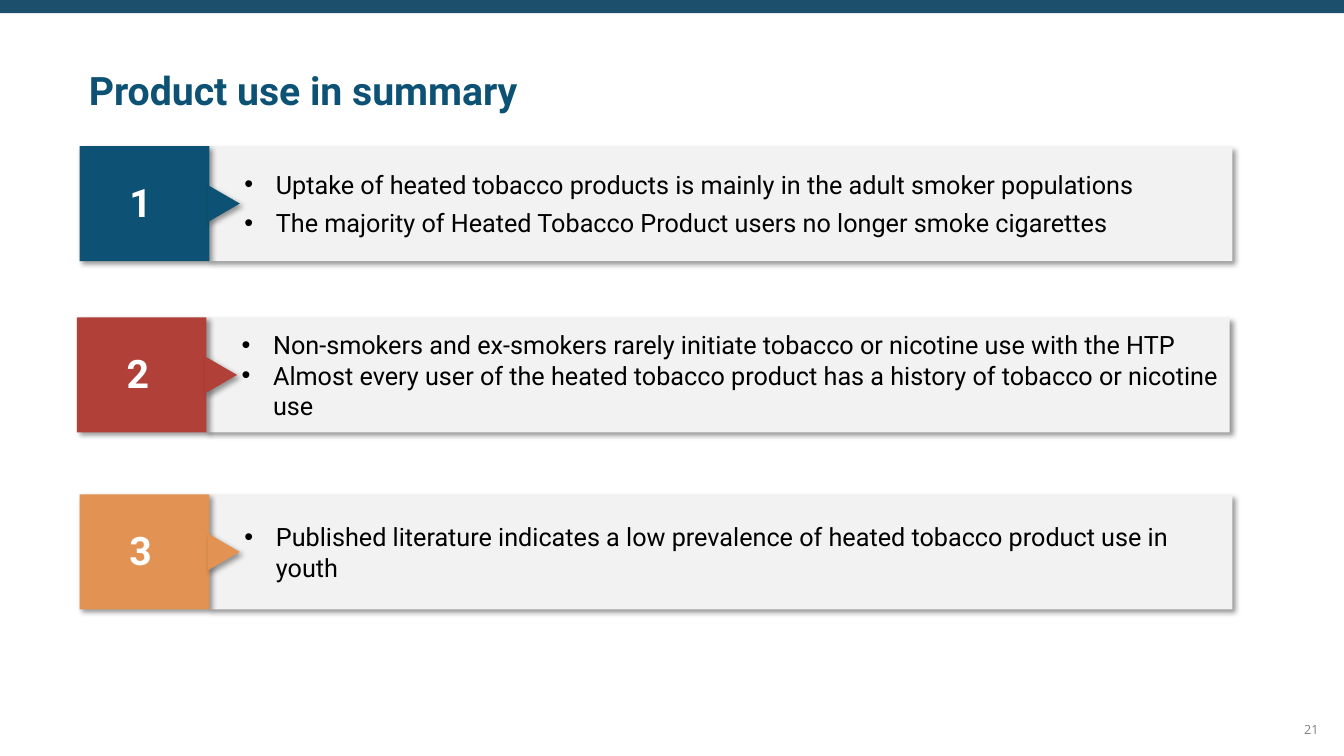
from lxml.etree import SubElement
from pptx import Presentation
from pptx.dml.color import RGBColor
from pptx.enum.shapes import MSO_SHAPE
from pptx.enum.text import MSO_ANCHOR, PP_ALIGN
from pptx.oxml.ns import qn
from pptx.util import Pt

BLUE = RGBColor(0x0D, 0x52, 0x74)
RED = RGBColor(0xB1, 0x40, 0x38)
ORANGE = RGBColor(0xE2, 0x93, 0x53)
BAND = RGBColor(0x1C, 0x4F, 0x6C)
PALE = RGBColor(0xF2, 0xF2, 0xF2)
GREY = RGBColor(0x80, 0x80, 0x80)
BLACK = RGBColor(0, 0, 0)
WHITE = RGBColor(0xFF, 0xFF, 0xFF)

TITLE = "Product use in summary"
PAGE = "21"
ROWS = [
    (56.9, 104.4, BLUE, 6, [
        "Uptake of heated tobacco products is mainly in the adult smoker populations",
        "The majority of Heated Tobacco Product users no longer smoke cigarettes"]),
    (54.9, 226.8, RED, 0, [
        "Non-smokers and ex-smokers rarely initiate tobacco or nicotine use with the HTP",
        "Almost every user of the heated tobacco product has a history of tobacco or nicotine use"]),
    (56.9, 353.2, ORANGE, 0, [
        "Published literature indicates a low prevalence of heated tobacco product use in youth"]),
]
HIGH = 82.1
BADGE = 92.6
PANEL = 730.8
DISC = 70
TIP_W, TIP_H = 26.6, 23


def style(font, name, size, color, bold=False):
    font.name = name
    font.size = Pt(size)
    font.color.rgb = color
    font.bold = bold


def add_shape(home, kind, box, color):
    shape = home.add_shape(kind, *map(Pt, box))
    shape.shadow.inherit = False
    shape.fill.solid()
    shape.fill.fore_color.rgb = color
    shape.line.fill.background()
    return shape


def add_shadow(shape):
    effects = shape._element.spPr.find(qn("a:effectLst"))
    outer = SubElement(effects, qn("a:outerShdw"), blurRad=str(Pt(4)),
                       dist=str(Pt(3)), dir="2700000", algn="tl", rotWithShape="0")
    color = SubElement(outer, qn("a:srgbClr"), val="000000")
    SubElement(color, qn("a:alpha"), val="40000")


def add_points(panel, points, gap):
    frame = panel.text_frame
    frame.word_wrap = True
    frame.vertical_anchor = MSO_ANCHOR.MIDDLE
    frame.text = "\n".join(points)
    for i, para in enumerate(frame.paragraphs):
        para.alignment = PP_ALIGN.LEFT
        if i and gap:
            para.space_before = Pt(gap)
        props = para._p.get_or_add_pPr()
        props.set("marL", str(Pt(40.5)))
        props.set("indent", str(Pt(-22.5)))
        SubElement(props, qn("a:buFont"), typeface="Arial")
        SubElement(props, qn("a:buChar"), char="•")
        style(para.runs[0].font, "Roboto", 18, BLACK)


def add_row(slide, number, left, top, color, gap, points):
    home = slide.shapes.add_group_shape().shapes
    edge = left + BADGE
    panel = add_shape(home, MSO_SHAPE.RECTANGLE, (edge, top, PANEL, HIGH), PALE)
    add_points(panel, points, gap)
    badge = add_shape(home, MSO_SHAPE.RECTANGLE, (left, top, BADGE, HIGH), color)
    tip = add_shape(home, MSO_SHAPE.ISOSCELES_TRIANGLE,
                    (edge - 3, top + (HIGH - TIP_H) / 2, TIP_W, TIP_H), color)
    tip.rotation = 90
    for shape in (panel, badge, tip):
        add_shadow(shape)
    disc = add_shape(home, MSO_SHAPE.OVAL, (left + 8.5, top + 4.7, DISC, DISC), color)
    frame = disc.text_frame
    frame.text = str(number)
    frame.vertical_anchor = MSO_ANCHOR.MIDDLE
    para = frame.paragraphs[0]
    para.alignment = PP_ALIGN.CENTER
    style(para.runs[0].font, "Roboto", 28, WHITE, True)


def add_title(slide):
    title = slide.shapes.title
    title.left, title.top, title.width, title.height = map(Pt, (56.2, 10.1, 822.2, 74.9))
    frame = title.text_frame
    frame.text = TITLE
    frame.word_wrap = True
    frame.vertical_anchor = MSO_ANCHOR.BOTTOM
    para = frame.paragraphs[0]
    para.alignment = PP_ALIGN.LEFT
    para.line_spacing = 0.85
    style(para.runs[0].font, "Roboto", 28, BLUE, True)


def add_page(slide):
    box = slide.shapes.add_textbox(*map(Pt, (907.2, 515.5, 34.6, 10.8)))
    frame = box.text_frame
    frame.margin_left = frame.margin_right = frame.margin_top = frame.margin_bottom = 0
    frame.word_wrap = True
    frame.text = PAGE
    para = frame.paragraphs[0]
    para.alignment = PP_ALIGN.RIGHT
    style(para.runs[0].font, "Open Sans", 9, GREY)


def main():
    deck = Presentation()
    deck.slide_width, deck.slide_height = Pt(960), Pt(540)
    slide = deck.slides.add_slide(deck.slide_layouts[5])
    add_page(slide)
    add_shape(slide.shapes, MSO_SHAPE.RECTANGLE, (0, 0, 960, 9.4), BAND)
    for number, row in enumerate(ROWS, 1):
        add_row(slide, number, *row)
    add_title(slide)
    deck.save("out.pptx")


if __name__ == "__main__":
    main()
